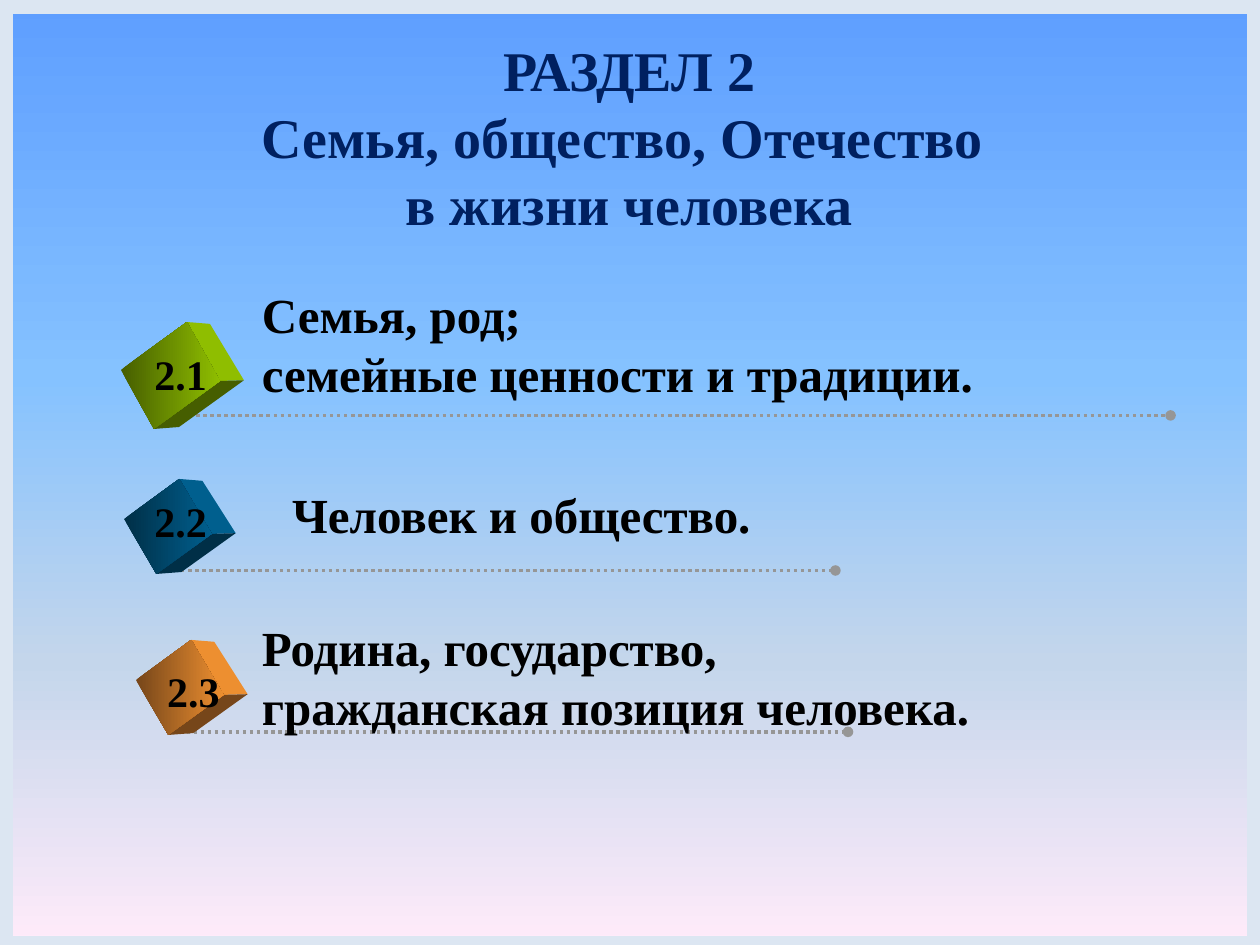
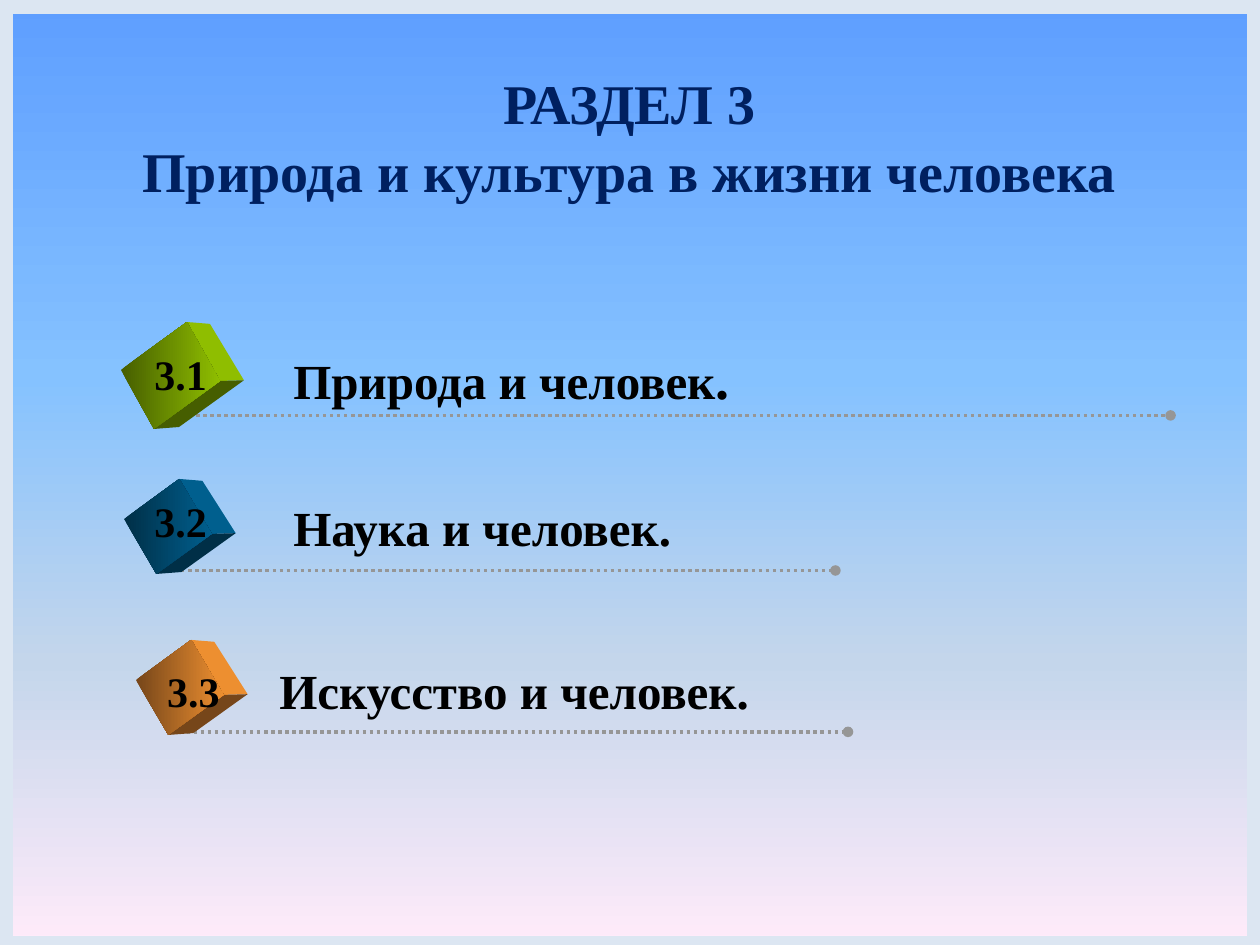
from dataclasses import dataclass

from lxml import etree
from pptx import Presentation
from pptx.dml.color import RGBColor
from pptx.enum.dml import MSO_LINE
from pptx.enum.shapes import MSO_CONNECTOR, MSO_SHAPE
from pptx.enum.text import MSO_ANCHOR, MSO_AUTO_SIZE, PP_ALIGN
from pptx.oxml.ns import qn
from pptx.util import Pt

FRAME = MSO_SHAPE.FRAME
STRAIGHT = MSO_CONNECTOR.STRAIGHT
DOTTED = MSO_LINE.ROUND_DOT
LEFT, CENTER = PP_ALIGN.LEFT, PP_ALIGN.CENTER
TOP, MIDDLE = MSO_ANCHOR.TOP, MSO_ANCHOR.MIDDLE
GROW, FIXED = MSO_AUTO_SIZE.SHAPE_TO_FIT_TEXT, MSO_AUTO_SIZE.NONE


@dataclass(frozen=True)
class Theme:
    """Colours and type shared by the slides."""
    font: str = "Times New Roman"
    title_size: int = 32
    caption_size: int = 28
    number_size: int = 24
    title: str = "002060"
    ink: str = "000000"
    border: str = "DCE6F2"
    rule: str = "969696"
    sky: tuple = ((0, "5E9EFF"), (40, "85C2FF"), (70, "C4D6EB"), (100, "FFEBFA"))


@dataclass(frozen=True)
class Row:
    """Geometry and colours of one numbered row, in points."""
    corner: tuple
    rise: tuple
    drop: tuple
    dark: str
    light: str
    number_at: tuple
    rule: tuple


THEME = Theme()
TITLE_BOX = (49, 42.5, 621.4, 70.6)
NUMBER_BOX = (45.4, 36.7)
TOP_DEPTH, RIGHT_DEPTH, BOTTOM_DEPTH = (13.2, 1.1), (13.7, -0.4), (14.3, -1.1)
SMALL_RISE, SMALL_DROP = (31.6, -22.9), (18.5, 31.4)
ROWS = (
    Row((69.1, 211.4), (37.7, -27.4), (18.9, 33.7), "465E00", "8FBE00",
        (81.2, 195.8), (108, 668.9, 237.4)),
    Row((70.9, 296.6), SMALL_RISE, SMALL_DROP, "002F47", "005F8E",
        (81.2, 279.4), (99.4, 477.4, 326)),
    Row((77.7, 388.6), SMALL_RISE, SMALL_DROP, "76461A", "ED8F30",
        (88.4, 376.6), (106.6, 484.6, 418.2)),
)


def color(value):
    """Turn a hex string into a colour."""
    return RGBColor.from_string(value)


def shift(point, offset):
    """Move a point by an offset."""
    return point[0] + offset[0], point[1] + offset[1]


def set_gradient(solid_fill, stops, angle):
    """Replace a solid fill element with a linear gradient."""
    gradient = etree.Element(qn("a:gradFill"), rotWithShape="1")
    stop_list = etree.SubElement(gradient, qn("a:gsLst"))
    for position, value in stops:
        stop = etree.SubElement(stop_list, qn("a:gs"), pos=str(position * 1000))
        etree.SubElement(stop, qn("a:srgbClr"), val=value)
    etree.SubElement(gradient, qn("a:lin"), ang=str(angle * 60000), scaled="0")
    solid_fill.getparent().replace(solid_fill, gradient)


def add_text(slide, box, paragraphs, *, size, ink=THEME.ink, align=LEFT,
             anchor=TOP, wrap=False, fit=GROW):
    """Add bold text whose paragraphs are lists of (text, size) or strings."""
    frame = slide.shapes.add_textbox(*map(Pt, box)).text_frame
    frame.word_wrap = wrap
    frame.auto_size = fit
    frame.vertical_anchor = anchor
    for index, content in enumerate(paragraphs):
        paragraph = frame.add_paragraph() if index else frame.paragraphs[0]
        paragraph.alignment = align
        runs = [(content, size)] if isinstance(content, str) else content
        for words, run_size in runs:
            for line_index, line in enumerate(words.split("\n")):
                if line_index:
                    paragraph.add_line_break()
                run = paragraph.add_run()
                run.text = line
                run.font.name = THEME.font
                run.font.size = Pt(run_size)
                run.font.bold = True
                run.font.color.rgb = color(ink)


def add_backdrop(slide):
    """Paint the sky gradient and the border frame."""
    slide.background.fill.solid()
    set_gradient(slide.element.find(".//" + qn("a:solidFill")), THEME.sky, 90)
    border = slide.shapes.add_shape(FRAME, 0, Pt(0.7), Pt(720), Pt(541.4))
    border.adjustments[0] = 0.008
    border.shadow.inherit = False
    border.fill.solid()
    border.fill.fore_color.rgb = color(THEME.border)
    border.line.color.rgb = color(THEME.border)
    border.line.width = Pt(6)


def add_rule(slide, start, end, y):
    """Draw a dotted rule that ends in a dot."""
    rule = slide.shapes.add_connector(STRAIGHT, Pt(start), Pt(y), Pt(end), Pt(y))
    rule.line.color.rgb = color(THEME.rule)
    rule.line.width = Pt(2)
    rule.line.dash_style = DOTTED
    properties = rule.element.spPr
    etree.SubElement(properties.find(qn("a:ln")), qn("a:tailEnd"), type="oval")
    etree.SubElement(properties, qn("a:effectLst"))


def add_face(slide, corners, fill):
    """Draw one plain face of a cube."""
    outline = [(Pt(x), Pt(y)) for x, y in corners]
    builder = slide.shapes.build_freeform(*outline[0])
    builder.add_line_segments(outline[1:], close=True)
    face = builder.convert_to_shape()
    face.shadow.inherit = False
    face.fill.solid()
    face.fill.fore_color.rgb = color(fill)
    face.line.fill.background()
    return face


def add_cube(slide, row):
    """Draw a tilted cube with a shaded front."""
    left = row.corner
    top, bottom = shift(left, row.rise), shift(left, row.drop)
    inner = shift(top, row.drop)
    shoulder = shift(top, TOP_DEPTH)
    right = shift(inner, RIGHT_DEPTH)
    heel = shift(bottom, BOTTOM_DEPTH)
    add_face(slide, (top, shoulder, right, inner), row.light)
    add_face(slide, (bottom, inner, right, heel), row.dark)
    front = add_face(slide, (left, top, inner, bottom), row.light)
    set_gradient(front.element.spPr.find(qn("a:solidFill")),
                 ((0, row.dark), (100, row.light)), 0)


def add_section(deck, number, heading, topics):
    """Add a section slide with its numbered topics."""
    slide = deck.slides.add_slide(deck.slide_layouts[6])
    add_backdrop(slide)
    add_text(slide, TITLE_BOX, [f"РАЗДЕЛ {number}\n{heading}"],
             size=THEME.title_size, ink=THEME.title, align=CENTER,
             anchor=MIDDLE, wrap=True, fit=FIXED)
    for index, (row, (box, caption)) in enumerate(zip(ROWS, topics), 1):
        add_rule(slide, *row.rule)
        add_cube(slide, row)
        add_text(slide, row.number_at + NUMBER_BOX, [f"{number}.{index}"],
                 size=THEME.number_size)
        add_text(slide, box, caption, size=THEME.caption_size,
                 wrap=box[2] >= 540)


def main():
    """Build and save both section slides."""
    deck = Presentation()
    deck.slide_width, deck.slide_height = Pt(720), Pt(540)
    add_section(deck, 2, "Семья, общество, Отечество \nв жизни человека", (
        ((142.6, 159.1, 424.8, 74.9),
         ["Семья, род;", "семейные ценности и традиции."]),
        ((159.8, 273.6, 279.4, 41), ["Человек и общество."]),
        ((142.6, 349.2, 540, 74.9),
         ["Родина, государство,", "гражданская позиция человека."]),
    ))
    add_section(deck, 3, "Природа и культура в жизни человека", (
        ((160.6, 193, 266.4, 46.1),
         [[("Природа и человек", THEME.caption_size), (".", THEME.title_size)]]),
        ((160.6, 280.8, 232.6, 41), ["Наука и человек."]),
        ((152.6, 373.7, 285.8, 41), ["Искусство и человек."]),
    ))
    deck.save("out.pptx")


if __name__ == "__main__":
    main()
